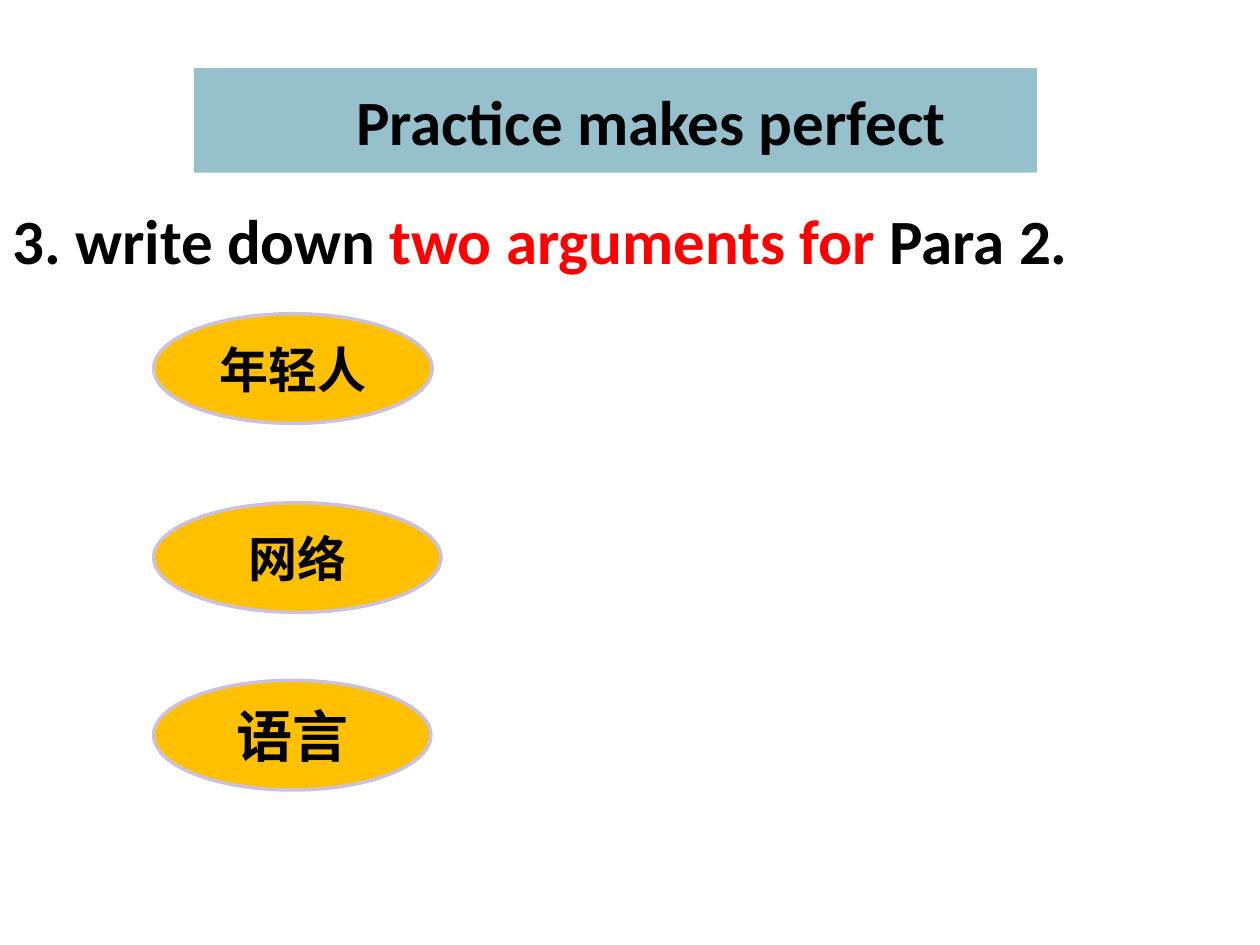
from lxml import etree
from pptx import Presentation
from pptx.dml.color import RGBColor
from pptx.enum.shapes import MSO_SHAPE
from pptx.enum.text import MSO_ANCHOR, PP_ALIGN
from pptx.oxml.ns import qn
from pptx.util import Inches, Pt

RECTANGLE, OVAL = MSO_SHAPE.RECTANGLE, MSO_SHAPE.OVAL
CENTER, LEFT = PP_ALIGN.CENTER, PP_ALIGN.LEFT
MIDDLE, TOP = MSO_ANCHOR.MIDDLE, MSO_ANCHOR.TOP
CELL = 0.1
BLACK, RED, TEAL, AMBER, LILAC = "000000", "FF0000", "31859C", "FFC000", "CCC1DA"
TOPICS = [("年轻人", 28, 0, 22.1), ("网络", 28, 15, 22.8), ("语言", 32, 29.1, 22)]


def color(code):
    """Turn a hex string into a colour."""
    return RGBColor.from_string(code)


def place(box):
    """Convert a box in grid columns and rows to lengths."""
    return [Inches(cells * CELL) for cells in box]


def write(frame, spans, size, align, anchor):
    """Fill a text frame with one bold paragraph of coloured spans."""
    frame.word_wrap = True
    frame.vertical_anchor = anchor
    para = frame.paragraphs[0]
    para.alignment = align
    for text, code in spans:
        span = para.add_run()
        span.text = text
        for name, value in {"name": "Calibri", "size": Pt(size), "bold": True}.items():
            setattr(span.font, name, value)
        span.font.color.rgb = color(code)


def add_filled(page, kind, box, fill):
    """Add a flat filled shape without shadow."""
    shape = page.shapes.add_shape(kind, *place(box))
    shape.shadow.inherit = False
    shape.fill.solid()
    shape.fill.fore_color.rgb = color(fill)
    return shape


def add_banner(page, box):
    """Add the translucent title banner, its text set right of centre."""
    banner = add_filled(page, RECTANGLE, box, TEAL)
    banner.line.fill.background()
    tint = banner.fill._xPr.find(qn("a:solidFill"))[0]
    etree.SubElement(tint, qn("a:alpha"), val="51000")
    write(banner.text_frame, [("Practice makes perfect", BLACK)], 36, CENTER, MIDDLE)
    banner.text_frame.margin_left = Inches(0.66)


def add_task(page, box):
    """Add the task sentence with its highlighted words."""
    task = page.shapes.add_textbox(*place(box))
    spans = [("3. write down ", BLACK), ("two arguments for ", RED), ("Para 2.", BLACK)]
    write(task.text_frame, spans, 36, LEFT, TOP)


def add_topics(page, box):
    """Add the column of topic ovals inside the box."""
    left, top, height = box
    for text, size, offset, width in TOPICS:
        oval = add_filled(page, OVAL, (left, top + offset, width, height), AMBER)
        oval.line.color.rgb = color(LILAC)
        oval.line.width = Pt(2)
        write(oval.text_frame, [(text, BLACK)], size, CENTER, MIDDLE)


def main():
    """Build the practice slide and save it."""
    deck = Presentation()
    deck.slide_width, deck.slide_height = place((100, 75))
    page = deck.slides.add_slide(deck.slide_layouts[6])
    add_task(page, (0, 15.5, 95, 49.5))
    add_banner(page, (15.4, 5.4, 66.9, 8.3))
    add_topics(page, (12.2, 24.9, 8.7))
    deck.save("out.pptx")


if __name__ == "__main__":
    main()
